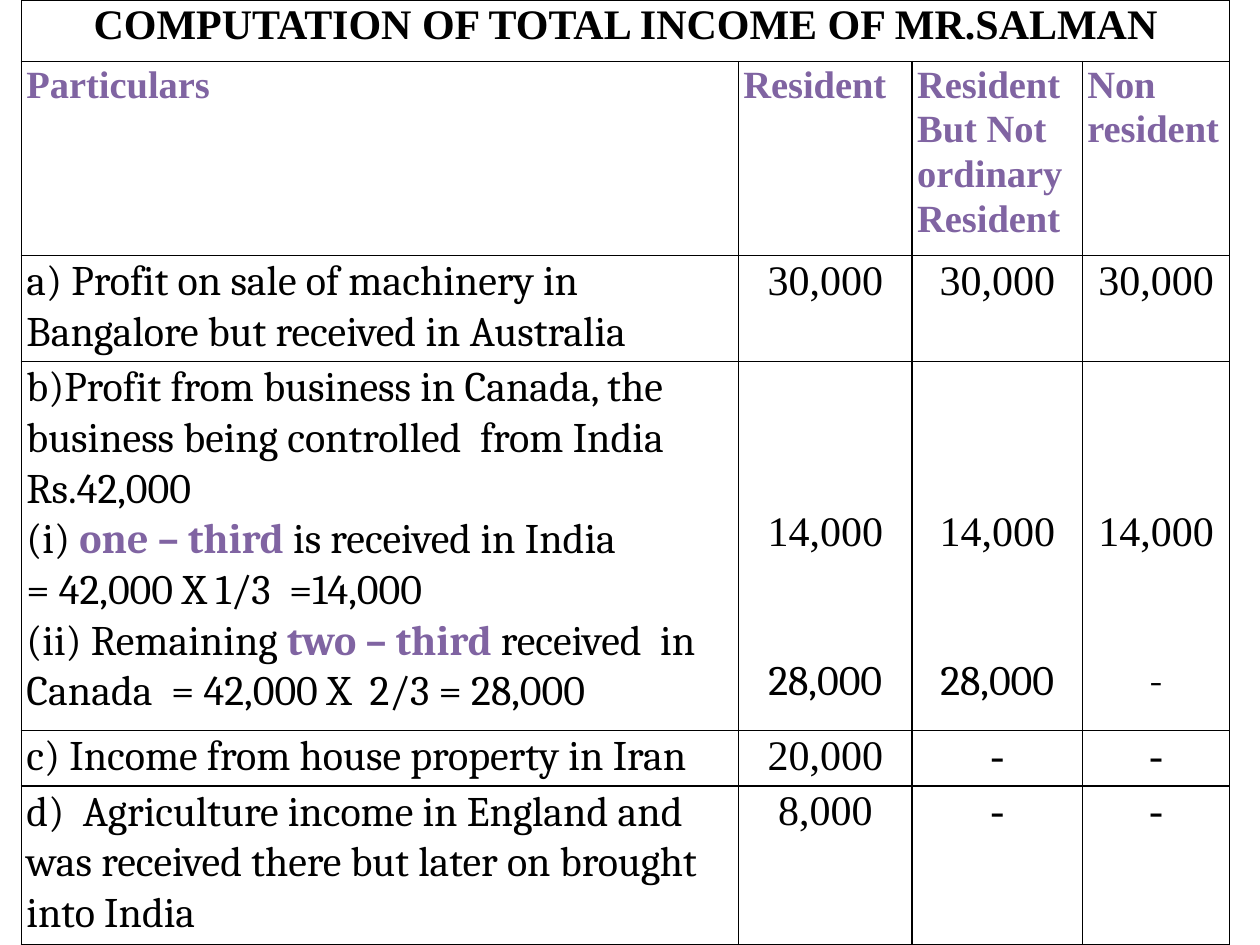
from dataclasses import dataclass

from pptx import Presentation, util as u
from pptx.dml.color import RGBColor
from pptx.enum import text
from pptx.oxml import parse_xml
from pptx.oxml.ns import nsdecls


@dataclass(frozen=True)
class Theme:
    ink: str = "000000"
    accent: str = "8064A2"
    serif: str = "Cambria"
    roman: str = "Times New Roman"
    body: int = 24
    head: int = 22
    line_spacing: float = 1.05
    border: float = 1


class SlideBuilder:
    def __init__(self, prs, theme):
        self.theme = theme
        self.s = prs.slides.add_slide(prs.slide_layouts[6])

    def table(self, left, top, cols, rows):
        frame = self.s.shapes.add_table(
            len(rows), len(cols), u.Inches(left), u.Inches(top),
            u.Inches(sum(cols)), u.Inches(sum(rows)))
        tbl = frame.table
        tbl.first_row = tbl.horz_banding = False
        for col, width in zip(tbl.columns, cols):
            col.width = u.Inches(width)
        for row, height in zip(tbl.rows, rows):
            row.height = u.Inches(height)
        for cell in tbl.iter_cells():
            self.borders(cell)
            cell.fill.background()
            cell.margin_left = cell.margin_right = u.Inches(0.04)
            cell.margin_top = cell.margin_bottom = 0
        return tbl

    def borders(self, cell):
        tc_pr = cell._tc.get_or_add_tcPr()
        for side in ("lnL", "lnR", "lnT", "lnB"):
            tc_pr.append(parse_xml(
                f'<a:{side} {nsdecls("a")} w="{u.Pt(self.theme.border)}">'
                f'<a:solidFill><a:srgbClr val="{self.theme.ink}"/></a:solidFill>'
                f'</a:{side}>'))

    def style(self, r, font, size, color, bold):
        r.font.name = font
        r.font.size = u.Pt(size)
        r.font.color.rgb = RGBColor.from_string(color)
        r.font.bold = bold

    def paragraph(self, p, content, font, size=None, color=None, bold=False,
                  center=False):
        """Write one paragraph; text between asterisks is emphasised."""
        t = self.theme
        p.line_spacing = t.line_spacing
        p.alignment = text.PP_ALIGN.CENTER if center else text.PP_ALIGN.LEFT
        for i, part in enumerate(content.split("*")):
            r = p.add_run()
            r.text = part
            strong = i % 2 == 1
            self.style(r, font, size or t.body,
                       t.accent if strong else color or t.ink, strong or bold)

    def cell(self, cell, lines, font, **fmt):
        tf = cell.text_frame
        for i, line in enumerate(lines):
            p = tf.add_paragraph() if i else tf.paragraphs[0]
            self.paragraph(p, line, font, **fmt)


COLS = [5.69, 1.38, 1.35, 1.17]
ROWS = [0.49, 1.54, 0.84, 2.93, 0.44, 1.26]
HEADERS = ["Particulars", "Resident", "Resident But Not ordinary Resident",
           "Non resident"]
BUSINESS_ROW = 3
ITEMS = [
    (["a) Profit on sale of machinery in Bangalore but received in Australia"],
     ["30,000", "30,000", "30,000"]),
    (["b)Profit from business in Canada, the business being controlled  from India Rs.42,000",
      "(i) *one – third *is received in India",
      "= 42,000 X 1/3  =14,000",
      "(ii) Remaining *two – third *received  in Canada  = 42,000 X  2/3 = 28,000"],
     ["14,000", "14,000", "14,000"]),
    (["c) Income from house property in Iran"], ["20,000", "-", "-"]),
    (["d)  Agriculture income in England and was received there but later on brought into India"],
     ["8,000", "-", "-"]),
]
REMAINDER = ["28,000", "28,000", "-"]


def main():
    prs = Presentation()
    prs.slide_width, prs.slide_height = u.Inches(10), u.Inches(7.5)
    t = Theme()
    b = SlideBuilder(prs, t)
    tbl = b.table(0.17, 0, COLS, ROWS)

    # Heading across all columns
    tbl.cell(0, 0).merge(tbl.cell(0, len(COLS) - 1))
    b.cell(tbl.cell(0, 0), ["COMPUTATION OF TOTAL INCOME OF MR.SALMAN"],
           t.roman, bold=True, center=True)

    # Column headers
    for c, header in enumerate(HEADERS):
        b.cell(tbl.cell(1, c), [header], t.roman, size=t.head,
               color=t.accent, bold=True)

    # Income items and their amounts
    for row, (lines, amounts) in enumerate(ITEMS, start=2):
        b.cell(tbl.cell(row, 0), lines, t.serif)
        for c, amount in enumerate(amounts, start=1):
            b.cell(tbl.cell(row, c), [amount], t.roman, center=True)

    # Second business amount, level with part (ii)
    for c, amount in enumerate(REMAINDER, start=1):
        cell = tbl.cell(BUSINESS_ROW, c)
        cell.margin_top = u.Inches(1.15)
        p = cell.text_frame.add_paragraph()
        p.space_before = u.Pt(57)
        b.paragraph(p, amount, t.serif, center=True)

    prs.save("out.pptx")


if __name__ == "__main__":
    main()
